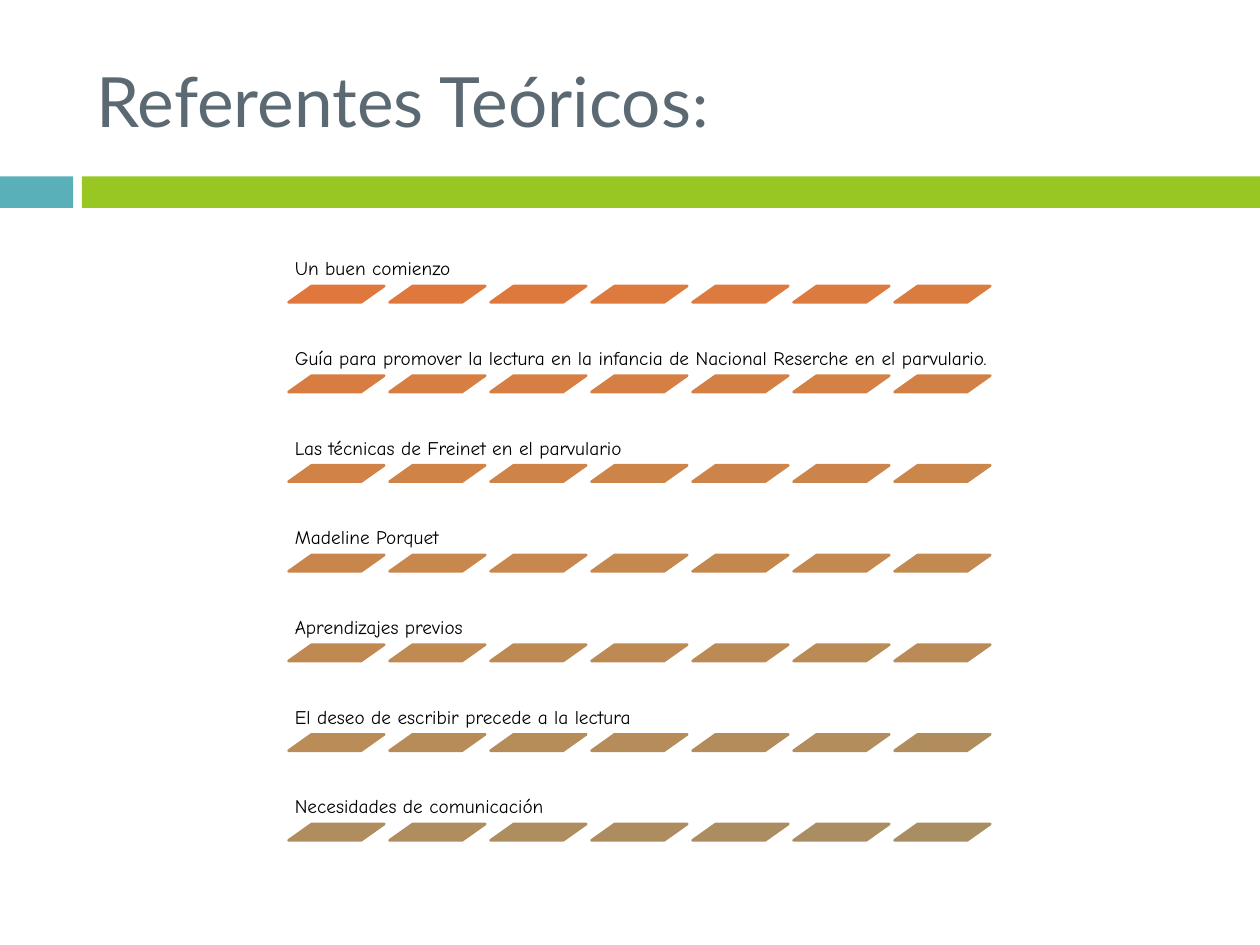
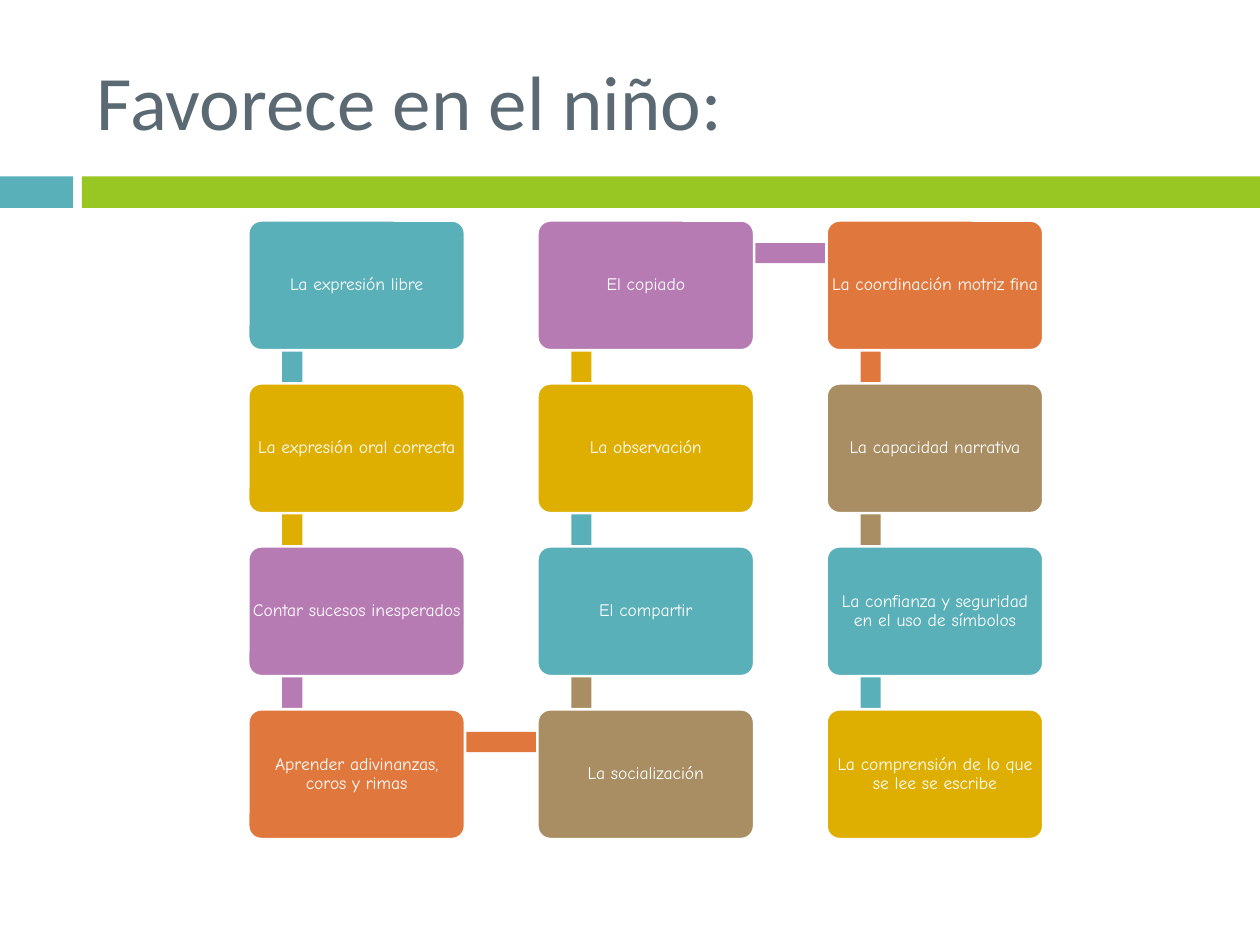
"""Build two slides: theoretical references and what the method favours in the child."""
from colorsys import hls_to_rgb, rgb_to_hls

from pptx import Presentation
from pptx.dml.color import RGBColor
from pptx.enum.shapes import MSO_SHAPE
from pptx.enum.text import MSO_ANCHOR, PP_ALIGN
from pptx.util import Inches, Pt

RECT, ROUNDED, SLANTED = MSO_SHAPE.RECTANGLE, MSO_SHAPE.ROUNDED_RECTANGLE, MSO_SHAPE.PARALLELOGRAM
MIDDLE, BOTTOM = MSO_ANCHOR.MIDDLE, MSO_ANCHOR.BOTTOM
LEFT, CENTER = PP_ALIGN.LEFT, PP_ALIGN.CENTER

WHITE = RGBColor(0xFF, 0xFF, 0xFF)
BLACK = RGBColor(0x00, 0x00, 0x00)
SLATE = RGBColor(0x5B, 0x69, 0x73)
GREEN = RGBColor(0x98, 0xC7, 0x23)
TEAL = RGBColor(0x59, 0xB0, 0xB9)
GOLD = RGBColor(0xDE, 0xAE, 0x00)
PURPLE = RGBColor(0xB7, 0x7B, 0xB4)
ORANGE = RGBColor(0xE0, 0x77, 0x3C)
BROWN = RGBColor(0xA9, 0x8D, 0x63)
CYCLE = [TEAL, GOLD, PURPLE, ORANGE, BROWN]

BODY_FONT = "Comic Neue"
TITLES = [
    [("Referentes Teóricos", "Lato", 39.6), (":", "Calibri", 39.6)],
    [("Favorece en el niño:", "Calibri", 44)],
]
REFERENCES = [
    "Un buen comienzo",
    "Guía para promover la lectura en la infancia de Nacional Reserche en el parvulario.",
    "Las técnicas de Freinet en el parvulario",
    "Madeline Porquet",
    "Aprendizajes previos",
    "El deseo de escribir precede a la lectura",
    "Necesidades de comunicación",
]
BENEFITS = [
    "La expresión libre",
    "La expresión oral correcta",
    "Contar sucesos inesperados",
    "Aprender adivinanzas, coros y rimas",
    "La socialización",
    "El compartir",
    "La observación",
    "El copiado",
    "La coordinación motriz fina",
    "La capacidad narrativa",
    "La confianza y seguridad en el uso de símbolos",
    "La comprensión de lo que se lee se escribe",
]


def add_filled(slide, kind, left, top, width, height, fill, line=None):
    shape = slide.shapes.add_shape(kind, Inches(left), Inches(top), Inches(width), Inches(height))
    shape.shadow.inherit = False
    shape.fill.solid()
    shape.fill.fore_color.rgb = fill
    if line is None:
        shape.line.fill.background()
    else:
        shape.line.color.rgb = line
        shape.line.width = Pt(1.5)
    return shape


def write(shape, runs, color, anchor, align, margins, spacing):
    frame = shape.text_frame
    frame.word_wrap = True
    frame.vertical_anchor = anchor
    for side, margin in zip(("left", "right", "top", "bottom"), margins):
        setattr(frame, f"margin_{side}", Inches(margin))
    paragraph = frame.paragraphs[0]
    paragraph.alignment = align
    paragraph.line_spacing = spacing
    for text, font, size in runs:
        run = paragraph.add_run()
        run.text = text
        for key, value in {"name": font, "size": Pt(size)}.items():
            setattr(run.font, key, value)
        run.font.color.rgb = color


prs = Presentation()
prs.slide_width, prs.slide_height = Inches(10), Inches(7.5)

slides = []
for title_runs in TITLES:
    slide = prs.slides.add_slide(prs.slide_layouts[6])
    add_filled(slide, RECT, 0, 1.4, 0.58, 0.25, TEAL)
    add_filled(slide, RECT, 0.65, 1.4, 9.35, 0.25, GREEN)
    title = slide.shapes.add_textbox(Inches(0.67), Inches(0.25), Inches(8.92), Inches(1.08))
    write(title, title_runs, SLATE, MIDDLE, LEFT, (0.1, 0.1, 0.05, 0.05), 1.0)
    slides.append(slide)
references_slide, benefits_slide = slides

SLANTS = 7
ROW_STEP = 4.27 / (len(REFERENCES) - 1)
SLANT_STEP = 4.81 / (SLANTS - 1)
first_hls, last_hls = (rgb_to_hls(*(part / 255 for part in color)) for color in (ORANGE, BROWN))
last_index = len(REFERENCES) * SLANTS - 1
for row, reference in enumerate(REFERENCES):
    top = 1.75 + row * ROW_STEP
    label = references_slide.shapes.add_textbox(Inches(2.29), Inches(top), Inches(5.67), Inches(0.52))
    write(label, [(reference, BODY_FONT, 11)], BLACK, BOTTOM, LEFT, (0.05,) * 4, 0.9)
    for column in range(SLANTS):
        share = (row * SLANTS + column) / last_index
        blend = hls_to_rgb(*(a + (b - a) * share for a, b in zip(first_hls, last_hls)))
        color = RGBColor(*(round(part * 255) for part in blend))
        slant = add_filled(references_slide, SLANTED, 2.29 + column * SLANT_STEP, top + 0.52,
                           0.76, 0.13, color, color)
        slant.adjustments[0] = 1.41

ROWS = 4
BOX_WIDTH, BOX_HEIGHT = 1.72, 1.03
COLUMN_STEP, BOX_STEP = 2.295, 3.88 / (ROWS - 1)
LINK = 0.16
places = []
for index in range(len(BENEFITS)):
    column, row = divmod(index, ROWS)
    if column % 2:
        row = ROWS - 1 - row
    places.append((1.97 + column * COLUMN_STEP, 1.75 + row * BOX_STEP))

for index, (benefit, (left, top)) in enumerate(zip(BENEFITS, places)):
    color = CYCLE[index % len(CYCLE)]
    if index + 1 < len(places):
        next_left, next_top = places[index + 1]
        across, down = next_left - left, abs(next_top - top)
        if across:
            add_filled(benefits_slide, RECT, left + 0.36, top + 0.18, across, LINK, color)
        else:
            add_filled(benefits_slide, RECT, left + 0.27, min(top, next_top) + 0.26, LINK, down, color)
    box = add_filled(benefits_slide, ROUNDED, left, top, BOX_WIDTH, BOX_HEIGHT, color, WHITE)
    box.adjustments[0] = 0.1
    write(box, [(benefit, BODY_FONT, 10)], WHITE, MIDDLE, CENTER, (0,) * 4, 0.9)

prs.save("out.pptx")
